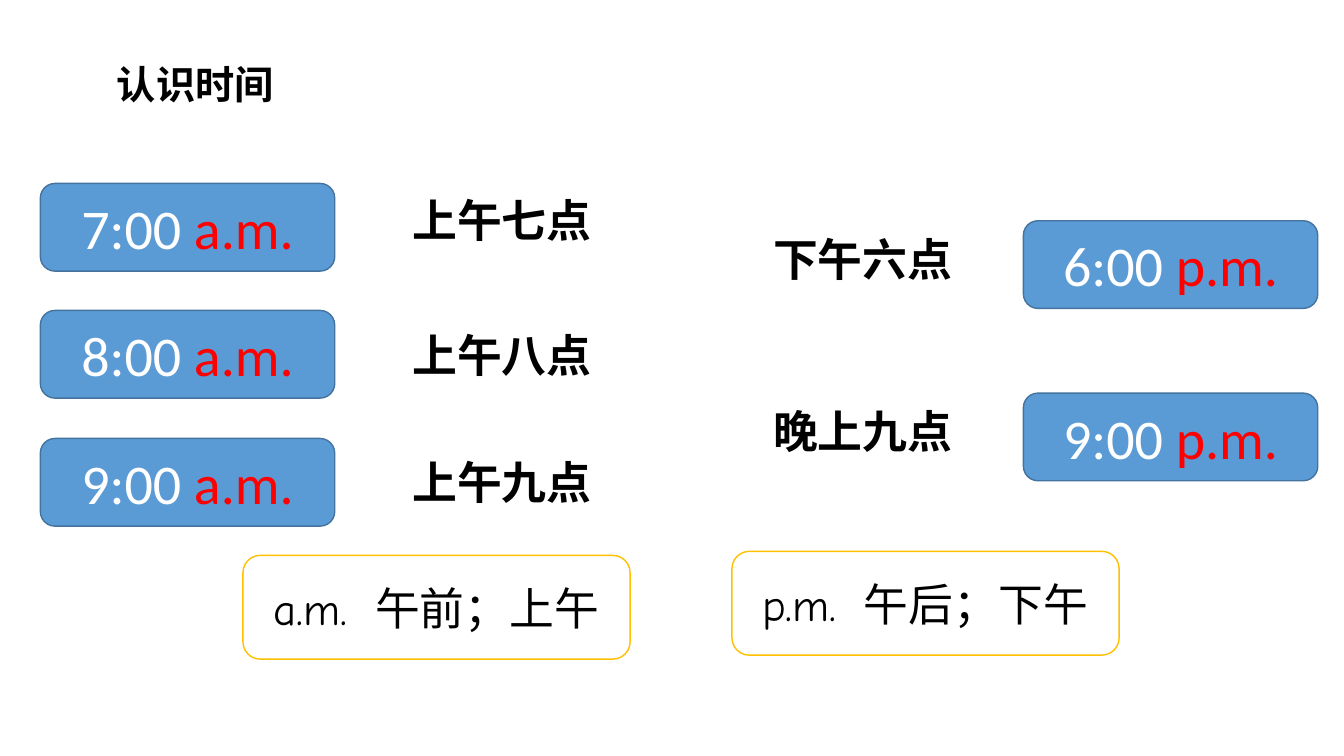
import pptx
import pptx.dml.color
import pptx.enum.shapes
import pptx.enum.text
import pptx.oxml
import pptx.oxml.ns
import pptx.util

Inches, Pt = pptx.util.Inches, pptx.util.Pt
RGBColor = pptx.dml.color.RGBColor
MSO_ANCHOR = pptx.enum.text.MSO_ANCHOR
PP_ALIGN = pptx.enum.text.PP_ALIGN
MSO_AUTO_SIZE = pptx.enum.text.MSO_AUTO_SIZE

BLACK = RGBColor(0x00, 0x00, 0x00)
WHITE = RGBColor(0xFF, 0xFF, 0xFF)
RED = RGBColor(0xFF, 0x00, 0x00)
BLUE = RGBColor(0x5B, 0x9B, 0xD5)
DARK_BLUE = RGBColor(0x43, 0x73, 0x9E)
GOLD = RGBColor(0xFF, 0xC0, 0x00)

CHINESE = "Noto Sans CJK SC"
CLOCK_FONT = "Calibri"
MEANING_FONT = "Comic Neue"

HEADING = "认识时间"
# Each time: clock, half of day, card top, wording, wording top
MORNING = [
    ("7:00 ", "a.m.", 1.82, "上午七点", 1.86),
    ("8:00 ", "a.m.", 3.08, "上午八点", 3.2),
    ("9:00 ", "a.m.", 4.35, "上午九点", 4.46),
]
EVENING = [
    ("6:00 ", "p.m.", 2.19, "下午六点", 2.25),
    ("9:00 ", "p.m.", 3.9, "晚上九点", 3.96),
]
# Each half of the day: times, card left, wording left, wording width
COLUMNS = [(MORNING, 0.4, 3.99, 2.41), (EVENING, 10.15, 7.57, 2.1)]
# Each meaning: half of day, Chinese, left, top
MEANINGS = [("a.m.", "午前；上午", 2.41, 5.51), ("p.m.", "午后；下午", 7.26, 5.47)]

CARD_SIZE = (2.92, 0.87)
MEANING_SIZE = (3.84, 1.03)
WORDING_HEIGHT = 0.64
MEANING_GAP = 9  # extra points between the abbreviation and its meaning


def add_run(paragraph, text, size, font, color, bold=False):
    run = paragraph.add_run()
    run.text = text
    run.font.size = Pt(size)
    run.font.bold = bold
    run.font.name = font
    run.font.color.rgb = color
    east_asian = pptx.oxml.parse_xml(
        f'<a:ea {pptx.oxml.ns.nsdecls("a")} typeface="{CHINESE}"/>')
    run.font._element.append(east_asian)
    return run


def add_card(slide, left, top, size, fill, line):
    """Add a rounded card and return its centred paragraph."""
    card = slide.shapes.add_shape(
        pptx.enum.shapes.MSO_SHAPE.ROUNDED_RECTANGLE,
        Inches(left), Inches(top), *map(Inches, size))
    card.shadow.inherit = False
    card.fill.solid()
    card.fill.fore_color.rgb = fill
    card.line.color.rgb = line
    card.line.width = Pt(1)
    card.text_frame.vertical_anchor = MSO_ANCHOR.MIDDLE
    paragraph = card.text_frame.paragraphs[0]
    paragraph.alignment = PP_ALIGN.CENTER
    return paragraph


def add_heading(slide):
    heading = slide.shapes.title
    heading.left, heading.top = Inches(1.06), Inches(0.55)
    heading.width, heading.height = Inches(1.78), Inches(0.57)
    frame = heading.text_frame
    frame.word_wrap = False
    frame.auto_size = MSO_AUTO_SIZE.SHAPE_TO_FIT_TEXT
    frame.vertical_anchor = MSO_ANCHOR.TOP
    frame.paragraphs[0].alignment = PP_ALIGN.LEFT
    add_run(frame.paragraphs[0], HEADING, 28, CHINESE, BLACK, bold=True)


def add_time(slide, time, card_left, wording_left, wording_width):
    clock, half, card_top, wording, wording_top = time
    face = add_card(slide, card_left, card_top, CARD_SIZE, BLUE, DARK_BLUE)
    add_run(face, clock, 40, CLOCK_FONT, WHITE)
    add_run(face, half, 40, CLOCK_FONT, RED)

    label = slide.shapes.add_textbox(
        Inches(wording_left), Inches(wording_top),
        Inches(wording_width), Inches(WORDING_HEIGHT))
    label.text_frame.word_wrap = True
    label.text_frame.auto_size = MSO_AUTO_SIZE.SHAPE_TO_FIT_TEXT
    add_run(label.text_frame.paragraphs[0], wording, 32, CHINESE, BLACK, bold=True)


def add_meaning(slide, half, meaning, left, top):
    line = add_card(slide, left, top, MEANING_SIZE, WHITE, GOLD)
    add_run(line, half, 32, MEANING_FONT, BLACK)
    gap = add_run(line, " ", 32, MEANING_FONT, BLACK)
    gap.font._element.set("spc", str(MEANING_GAP * 100))
    add_run(line, meaning, 32, MEANING_FONT, BLACK)


def main():
    deck = pptx.Presentation()
    deck.slide_width, deck.slide_height = Inches(13.33), Inches(7.5)
    slide = deck.slides.add_slide(deck.slide_layouts.get_by_name("Title Only"))
    add_heading(slide)
    for times, *places in COLUMNS:
        for time in times:
            add_time(slide, time, *places)
    for meaning in MEANINGS:
        add_meaning(slide, *meaning)
    deck.save("out.pptx")


if __name__ == "__main__":
    main()
